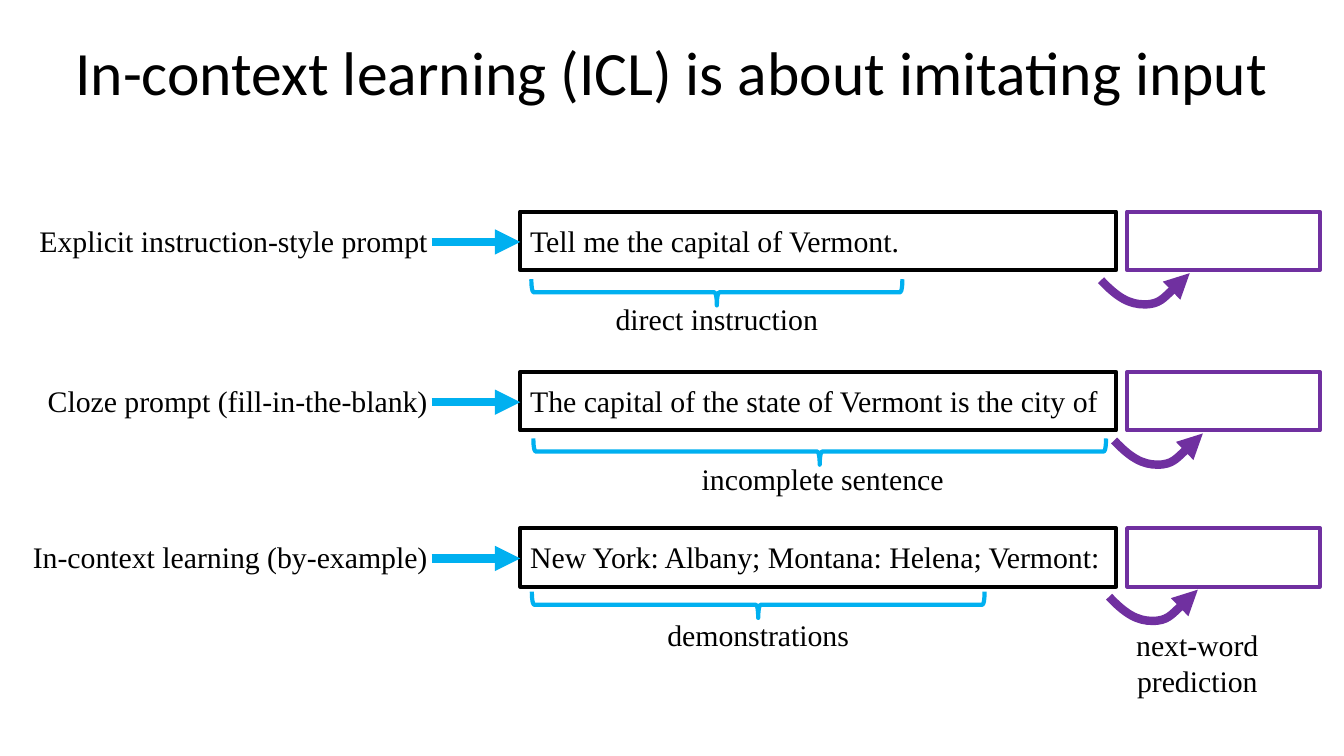
from dataclasses import dataclass

from lxml.etree import SubElement
from pptx import Presentation
from pptx.dml.color import RGBColor
from pptx.enum.shapes import MSO_CONNECTOR as Connector
from pptx.enum.shapes import MSO_SHAPE as Preset
from pptx.enum.text import MSO_ANCHOR as Anchor
from pptx.enum.text import MSO_AUTO_SIZE as AutoSize
from pptx.enum.text import PP_ALIGN as Align
from pptx.oxml.ns import qn
from pptx.util import Inches, Pt


@dataclass(frozen=True)
class Theme:
    text: RGBColor = RGBColor(0, 0, 0)
    blue: RGBColor = RGBColor(0x00, 0xB0, 0xF0)
    purple: RGBColor = RGBColor(0x70, 0x30, 0xA0)
    title_font: str = "Calibri"
    body_font: str = "Times New Roman"
    title_size: float = 44
    body_size: float = 21.3
    outline: float = 3
    arrow: float = 6


@dataclass(frozen=True)
class PromptRow:
    top: float
    label: str
    label_width: float
    prompt: str
    prompt_width: float
    caption: str
    caption_center: float
    caption_width: float
    brace_center: float
    brace_middle: float
    brace_length: float
    curve_left: float


THEME = Theme()
LABEL_RIGHT, ARROW_LEFT, PROMPT_LEFT, ANSWER_LEFT = 4.34, 4.28, 5.16, 11.18
BOX_HEIGHT, PROMPT_BOX_WIDTH, ANSWER_WIDTH = 0.58, 5.91, 1.91
TEXT_HEIGHT, BRACE_DEPTH = 0.46, 0.26
# Two cubic segments, as offsets from the left of the curve and the top of its row.
CURVE = [(0, 0.68), (0.16, 0.85), (0.28, 0.92), (0.43, 0.92),
         (0.58, 0.92), (0.73, 0.76), (0.88, 0.61)]

ROWS = [
    PromptRow(2.1, "Explicit instruction-style prompt", 4.1,
              "Tell me the capital of Vermont.", 3.91,
              "direct instruction", 7.11, 2.23, 7.11, 2.9, 3.68, 10.92),
    PromptRow(3.69, "Cloze prompt (fill-in-the-blank)", 4.02,
              "The capital of the state of Vermont is the city of", 5.91,
              "incomplete sentence", 8.16, 2.63, 8.13, 4.48, 5.68, 11.05),
    PromptRow(5.24, "In-context learning (by-example)", 4.17,
              "New York: Albany; Montana: Helena; Vermont:", 6,
              "demonstrations", 7.52, 2.03, 7.52, 6, 4.49, 11),
]


def add_text(page, text: str, left: float, top: float, width: float,
             height: float = TEXT_HEIGHT, *, align=Align.LEFT, wrap: bool = False,
             font: str = THEME.body_font, size: float = THEME.body_size,
             anchor=Anchor.TOP, grow: bool = True, spacing: float = 1,
             side_inset: float = 0.1) -> None:
    box = page.shapes.add_textbox(Inches(left), Inches(top), Inches(width), Inches(height))
    frame = box.text_frame
    frame.word_wrap = wrap
    frame.auto_size = AutoSize.SHAPE_TO_FIT_TEXT if grow else AutoSize.NONE
    frame.vertical_anchor = anchor
    frame.margin_left = frame.margin_right = Inches(side_inset)
    para = frame.paragraphs[0]
    para.alignment = align
    para.line_spacing = spacing
    span = para.add_run()
    span.text = text
    span.font.name = font
    span.font.size = Pt(size)
    span.font.color.rgb = THEME.text


def style_outline(shape, color: RGBColor, width: float) -> None:
    shape.shadow.inherit = False
    shape.fill.background()
    shape.line.color.rgb = color
    shape.line.width = Pt(width)


def add_arrowhead(shape) -> None:
    SubElement(shape.line._get_or_add_ln(), qn("a:tailEnd"), type="triangle")


def add_outlined(page, preset, left: float, top: float, width: float, height: float,
                 color: RGBColor, rotation: float = 0) -> None:
    shape = page.shapes.add_shape(preset, Inches(left), Inches(top),
                                  Inches(width), Inches(height))
    style_outline(shape, color, THEME.outline)
    shape.rotation = rotation


def add_arrow(page, left: float, right: float, y: float) -> None:
    arrow = page.shapes.add_connector(Connector.STRAIGHT, Inches(left), Inches(y),
                                      Inches(right), Inches(y))
    arrow.line.color.rgb = THEME.blue
    arrow.line.width = Pt(THEME.arrow)
    add_arrowhead(arrow)
    SubElement(arrow._element.spPr, qn("a:effectLst"))


def add_curved_arrow(page, left: float, top: float) -> None:
    """Outline the control points, then turn each three segments into one cubic curve."""
    points = [(Inches(left + x), Inches(top + y)) for x, y in CURVE]
    builder = page.shapes.build_freeform(*points[0])
    builder.add_line_segments(points[1:], close=False)
    curve = builder.convert_to_shape()
    outline = next(curve._element.iter(qn("a:path")))
    segments = outline.findall(qn("a:lnTo"))
    for start in range(0, len(segments), 3):
        cubic = SubElement(outline, qn("a:cubicBezTo"))
        for segment in segments[start:start + 3]:
            cubic.append(segment[0])
            outline.remove(segment)
    style_outline(curve, THEME.purple, THEME.arrow)
    add_arrowhead(curve)


def add_prompt_row(page, row: PromptRow) -> None:
    text_top = row.top + 0.06
    add_text(page, row.label, LABEL_RIGHT - row.label_width, text_top,
             row.label_width, align=Align.RIGHT)
    add_text(page, row.prompt, PROMPT_LEFT, text_top, row.prompt_width)
    add_outlined(page, Preset.RECTANGLE, PROMPT_LEFT, row.top,
                 PROMPT_BOX_WIDTH, BOX_HEIGHT, THEME.text)
    add_outlined(page, Preset.RECTANGLE, ANSWER_LEFT, row.top,
                 ANSWER_WIDTH, BOX_HEIGHT, THEME.purple)
    add_arrow(page, ARROW_LEFT, PROMPT_LEFT, row.top + 0.3)
    add_outlined(page, Preset.LEFT_BRACE, row.brace_center - BRACE_DEPTH / 2,
                 row.brace_middle - row.brace_length / 2,
                 BRACE_DEPTH, row.brace_length, THEME.blue, rotation=270)
    add_text(page, row.caption, row.caption_center - row.caption_width / 2,
             row.top + 0.83, row.caption_width, align=Align.CENTER)
    add_curved_arrow(page, row.curve_left, row.top)


def main() -> None:
    deck = Presentation()
    deck.slide_width, deck.slide_height = Inches(13.33), Inches(7.5)
    page = deck.slides.add_slide(deck.slide_layouts[6])
    add_text(page, "In-context learning (ICL) is about imitating input",
             0, 0.02, 13.33, 1.45, align=Align.CENTER, wrap=True, grow=False,
             font=THEME.title_font, size=THEME.title_size,
             anchor=Anchor.MIDDLE, spacing=0.9)
    for row in ROWS:
        add_prompt_row(page, row)
    add_text(page, "next-word prediction", 10.53, 6.17, 2.69, 0.82,
             align=Align.CENTER, wrap=True, side_inset=0.5)
    deck.save("out.pptx")


if __name__ == "__main__":
    main()
